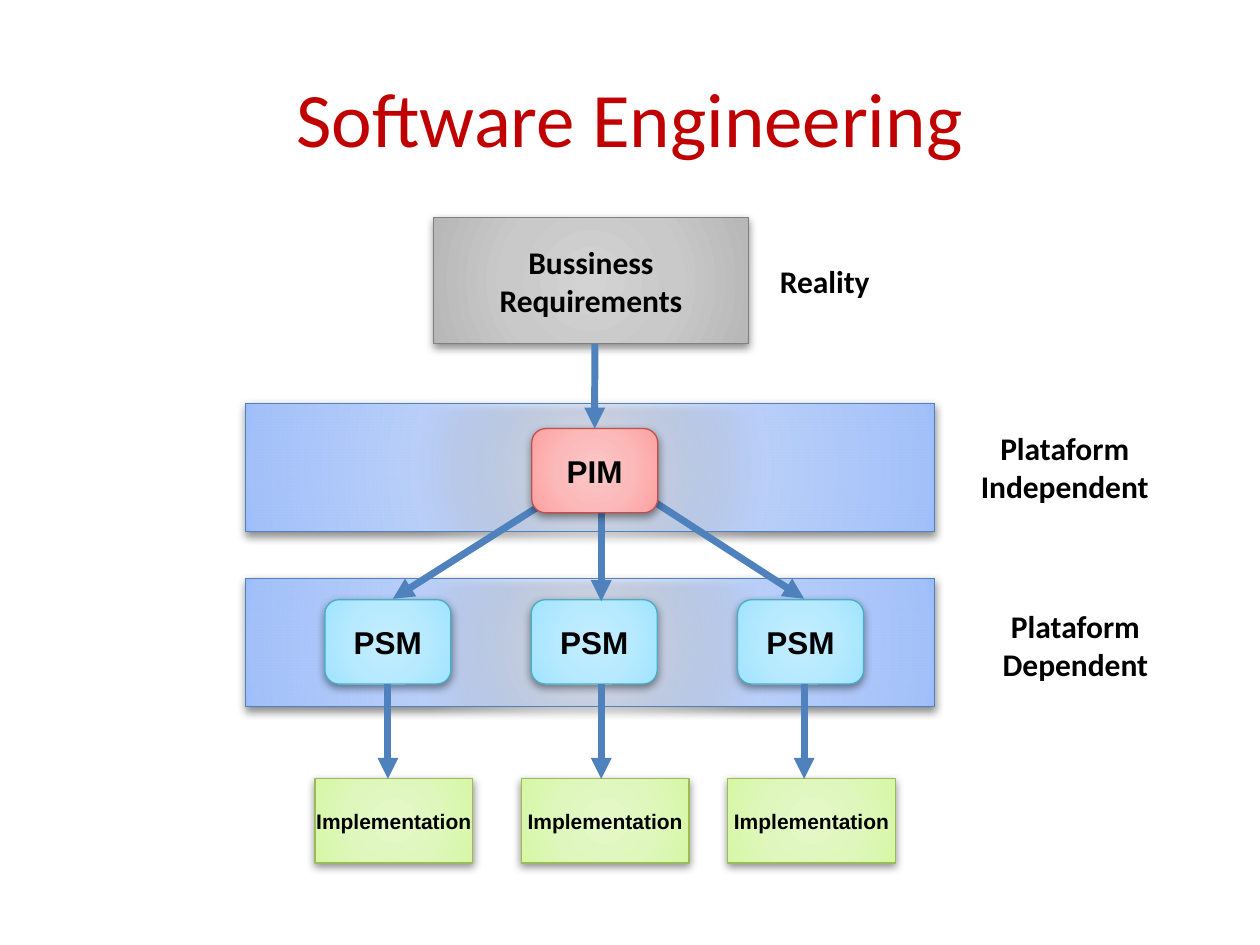
from collections import namedtuple
from lxml import etree
from pptx import Presentation
from pptx.dml.color import RGBColor
from pptx.enum.shapes import MSO_CONNECTOR as Connector, MSO_SHAPE as Shape
from pptx.enum.text import MSO_ANCHOR as Anchor, MSO_AUTO_SIZE as AutoSize, PP_ALIGN as Align
from pptx.oxml import parse_xml
from pptx.oxml.ns import nsdecls, qn
from pptx.util import Cm, Pt

Box = namedtuple("Box", "left top width height")
Look = namedtuple("Look", "line stops center_alpha", defaults=[100])

BLACK = RGBColor(0x00, 0x00, 0x00)
RED = RGBColor(0xC0, 0x00, 0x00)
BLUE = RGBColor(0x4F, 0x81, 0xBD)
GRAY = RGBColor(0x80, 0x80, 0x80)
ROSE = RGBColor(0xC0, 0x50, 0x4D)
AQUA = RGBColor(0x4B, 0xAC, 0xC6)
GREEN = RGBColor(0x9B, 0xBB, 0x59)


def shades(*codes):
    return [RGBColor.from_string(code) for code in codes]


STOP_POSITIONS = (0, 50, 97, 100)
BAND_LOOK = Look(BLUE, shades("C8D9FA", "BAD0FA", "A3C1FA", "99BCFD"), 22)
REALITY_LOOK = Look(GRAY, shades("D3D3D3", "C9C9C9", "B8B8B8", "B2B2B2"))
PIM_LOOK = Look(ROSE, shades("FBC7C7", "FBBAB9", "FDA2A1", "FF9A98"))
PSM_LOOK = Look(AQUA, shades("C5EDFE", "B7EAFF", "A1E4FF", "9BE3FF"))
CODE_LOOK = Look(GREEN, shades("E5F8CA", "DFF7BD", "D7F7A7", "D5F99E"))
COLUMN_STEP = 4.16


def write(shape, text, font="Calibri", size=18, color=BLACK, bold=True,
          align=Align.CENTER, anchor=Anchor.MIDDLE, wrap=False):
    frame = shape.text_frame
    frame.word_wrap = wrap
    frame.vertical_anchor = anchor
    frame.text = text
    for para in frame.paragraphs:
        para.alignment = align
        for span in para.runs:
            span.font.name = font
            span.font.size = Pt(size)
            span.font.bold = bold
            span.font.color.rgb = color


def add_label(page, box, text, **style):
    label = page.shapes.add_textbox(*map(Cm, box))
    write(label, text, **style)
    return label


def add_caption(page, box, text, **style):
    caption = add_label(page, box, text, anchor=Anchor.TOP, **style)
    caption.text_frame.auto_size = AutoSize.SHAPE_TO_FIT_TEXT


def fill_radial(shape, look):
    alphas = [look.center_alpha, 100, 100, 100]
    stops = "".join(
        f'<a:gs pos="{position * 1000}"><a:srgbClr val="{color}">'
        f'<a:alpha val="{alpha * 1000}"/></a:srgbClr></a:gs>'
        for position, color, alpha in zip(STOP_POSITIONS, look.stops, alphas))
    shape._element.spPr.append(parse_xml(
        f'<a:gradFill {nsdecls("a")} rotWithShape="1"><a:gsLst>{stops}</a:gsLst>'
        '<a:path path="circle"><a:fillToRect l="50000" t="50000" r="50000" b="50000"/>'
        '</a:path></a:gradFill>'))


def cast_shadow(shape):
    shape.shadow.inherit = False
    effects = shape._element.spPr.find(qn("a:effectLst"))
    effects.append(parse_xml(
        f'<a:outerShdw {nsdecls("a")} blurRad="{Pt(5)}" dist="{Pt(2)}" dir="5400000" '
        'rotWithShape="0"><a:srgbClr val="000000"><a:alpha val="43000"/></a:srgbClr>'
        '</a:outerShdw>'))


def add_block(page, kind, box, look):
    block = page.shapes.add_shape(kind, *map(Cm, box))
    fill_radial(block, look)
    block.line.color.rgb = look.line
    block.line.width = Pt(0.75)
    cast_shadow(block)
    return block


def add_arrow(page, start, end):
    arrow = page.shapes.add_connector(Connector.STRAIGHT, *map(Cm, start + end))
    arrow.line.color.rgb = BLUE
    arrow.line.width = Pt(4)
    etree.SubElement(arrow.line._get_or_add_ln(), qn("a:tailEnd"), type="triangle")
    etree.SubElement(arrow._element.spPr, qn("a:effectLst"))
    return arrow


def add_model(page, left, top, text, look):
    model = add_block(page, Shape.FLOWCHART_ALTERNATE_PROCESS, Box(left, top, 2.54, 1.7), look)
    write(model, text, font="Arial")
    return model


def add_dependent_level(page, box):
    add_block(page, Shape.RECTANGLE, box, BAND_LOOK)
    models = [add_model(page, box.left + 1.6 + column * COLUMN_STEP, box.top + 0.43, "PSM", PSM_LOOK)
              for column in range(3)]
    add_caption(page, Box(box.left + 14.99, box.top + 0.46, 3.48, 1.8), "Plataform\nDependent")
    return models


def add_independent_level(page, box):
    add_block(page, Shape.RECTANGLE, box, BAND_LOOK)
    for start, end in (((6.35, 1.8), (2.97, 3.94)),
                       ((7.17, 2.08), (7.17, 3.99)),
                       ((7.95, 1.8), (11.26, 3.94))):
        add_arrow(page, (box.left + start[0], box.top + start[1]),
                  (box.left + end[0], box.top + end[1]))
    add_caption(page, Box(box.left + 14.56, box.top + 0.4, 3.91, 1.8), "Plataform\nIndependent")
    return add_model(page, box.left + 5.77, box.top + 0.51, "PIM", PIM_LOOK)


def add_reality_level(page, box, target):
    requirements = add_block(page, Shape.RECTANGLE, box, REALITY_LOOK)
    write(requirements, "Bussiness\nRequirements", wrap=True)
    add_caption(page, Box(box.left + 6.73, box.top + 0.77, 2.34, 1.02), "Reality", align=Align.LEFT)
    arrow = add_arrow(page, (box.left + 3.25, box.top + box.height), (box.left + 3.25, box.top + 4.2))
    arrow.end_connect(target, 0)


def add_implementations(page, box, models):
    for column, width in enumerate((3.18, 3.38, 3.38)):
        place = Box(box.left + column * COLUMN_STEP, box.top, width, box.height)
        block = add_block(page, Shape.FLOWCHART_PROCESS, place, CODE_LOOK)
        write(block, "Implementation", font="Arial", size=12)
    arrows = [add_arrow(page, (box.left + offset, box.top - 1.91), (box.left + offset, box.top))
              for offset in (1.47, 5.77, 9.86)]
    arrows[0].begin_connect(models[0], 2)


def main():
    deck = Presentation()
    deck.slide_width, deck.slide_height = Cm(25.4), Cm(19.05)
    page = deck.slides.add_slide(deck.slide_layouts[6])
    add_label(page, Box(1.27, 0.76, 22.86, 3.18), "Software Engineering",
              size=44, color=RED, bold=False, wrap=True)
    models = add_dependent_level(page, Box(4.95, 11.66, 13.89, 2.59))
    pim = add_independent_level(page, Box(4.95, 8.13, 13.89, 2.59))
    add_reality_level(page, Box(8.74, 4.39, 6.35, 2.54), pim)
    add_implementations(page, Box(6.35, 15.7, 11.7, 1.7), models)
    deck.save("out.pptx")


if __name__ == "__main__":
    main()
